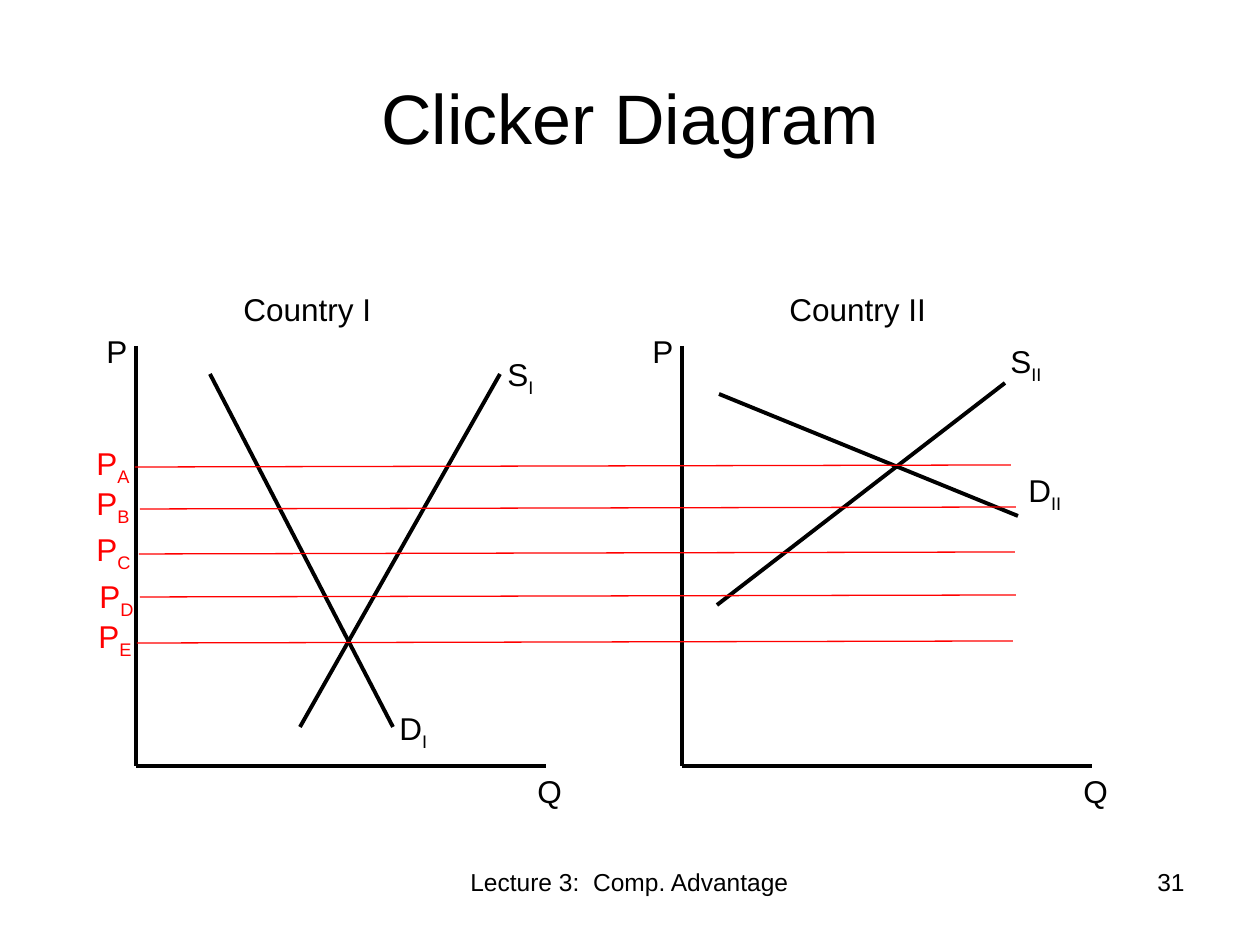
from dataclasses import dataclass

from lxml import etree
from pptx import Presentation
from pptx.dml.color import RGBColor
from pptx.enum.shapes import MSO_CONNECTOR
from pptx.enum.text import MSO_ANCHOR, PP_ALIGN
from pptx.oxml.ns import qn
from pptx.slide import Slide
from pptx.text.text import Font
from pptx.util import Emu, Pt

STRAIGHT = MSO_CONNECTOR.STRAIGHT
MIDDLE = MSO_ANCHOR.MIDDLE
LEFT, CENTER, RIGHT = PP_ALIGN.LEFT, PP_ALIGN.CENTER, PP_ALIGN.RIGHT
PIXELS_PER_INCH = 126
BLACK, RED = "000000", "FF0000"
AXIS_TOP, AXIS_BOTTOM, AXIS_LENGTH = 346, 766, 410
PRICE_LENGTH, PRICE_RISE = 876, 2


@dataclass(frozen=True)
class Label:
    text: str
    left: int
    top: int
    width: int = 63
    height: int = 50
    subscript: str = ""
    color: str = BLACK
    size: int = 18
    align: PP_ALIGN = LEFT


@dataclass(frozen=True)
class Segment:
    start: tuple[int, int]
    end: tuple[int, int]
    color: str = BLACK
    weight: float = 2.25


@dataclass(frozen=True)
class Curve:
    name: str
    segment: Segment
    label_left: int
    label_top: int


@dataclass(frozen=True)
class Country:
    numeral: str
    axis_x: int
    curves: tuple[Curve, ...]


@dataclass(frozen=True)
class Price:
    name: str
    start: tuple[int, int]
    label_left: int
    label_top: int


COUNTRIES = (
    Country("II", 682, (
        Curve("D", Segment((719, 394), (1018, 516)), 1016, 465),
        Curve("S", Segment((717, 605), (1005, 383)), 998, 336),
    )),
    Country("I", 136, (
        Curve("D", Segment((210, 374), (393, 727)), 387, 703),
        Curve("S", Segment((300, 727), (500, 374)), 495, 349),
    )),
)
PRICES = (
    Price("A", (135, 467), 84, 438),
    Price("B", (140, 509), 84, 478),
    Price("C", (139, 554), 84, 524),
    Price("D", (140, 597), 87, 571),
    Price("E", (137, 643), 86, 611),
)


def px(length: int) -> Emu:
    return Emu(round(length * 914400 / PIXELS_PER_INCH))


def rgb(color: str) -> RGBColor:
    return RGBColor.from_string(color)


def style_font(font: Font, size: int, color: str) -> None:
    font.name = "Arial"
    font.size = Pt(size)
    font.color.rgb = rgb(color)


def draw_label(slide: Slide, label: Label) -> None:
    shape = slide.shapes.add_textbox(
        px(label.left), px(label.top), px(label.width), px(label.height))
    shape.text_frame.word_wrap = True
    paragraph = shape.text_frame.paragraphs[0]
    paragraph.alignment = label.align
    style_font(paragraph.font, label.size, label.color)
    paragraph.add_run().text = label.text
    if label.subscript:
        run = paragraph.add_run()
        run.text = label.subscript
        run._r.get_or_add_rPr().set("baseline", "-25000")


def draw_segment(slide: Slide, segment: Segment) -> None:
    connector = slide.shapes.add_connector(
        STRAIGHT, *map(px, segment.start), *map(px, segment.end))
    connector.line.color.rgb = rgb(segment.color)
    connector.line.width = Pt(segment.weight)
    etree.SubElement(connector._element.spPr, qn("a:effectLst"))


def draw_country(slide: Slide, country: Country) -> None:
    x = country.axis_x
    origin = (x, AXIS_BOTTOM)
    draw_segment(slide, Segment((x, AXIS_TOP), origin))
    draw_segment(slide, Segment(origin, (x + AXIS_LENGTH, AXIS_BOTTOM)))
    draw_label(slide, Label(f"Country {country.numeral}", x + 95, 284, 210))
    draw_label(slide, Label("P", x - 42, 326))
    draw_label(slide, Label("Q", x + 389, AXIS_BOTTOM))
    for curve in country.curves:
        draw_segment(slide, curve.segment)
        draw_label(slide, Label(curve.name, curve.label_left, curve.label_top,
                                subscript=country.numeral))


def draw_price(slide: Slide, price: Price) -> None:
    x, y = price.start
    end = (x + PRICE_LENGTH, y - PRICE_RISE)
    draw_segment(slide, Segment(price.start, end, RED, 0.75))
    draw_label(slide, Label("P", price.label_left, price.label_top,
                            subscript=price.name, color=RED))


def draw_title(slide: Slide, text: str) -> None:
    title = slide.shapes.title
    title.left, title.top = px(63), px(38)
    title.width, title.height = px(1134), px(157)
    title.text_frame.text = text
    title.text_frame.vertical_anchor = MIDDLE
    paragraph = title.text_frame.paragraphs[0]
    paragraph.alignment = CENTER
    style_font(paragraph.font, 40, BLACK)


def main() -> None:
    presentation = Presentation()
    presentation.slide_width, presentation.slide_height = px(1260), px(945)
    slide = presentation.slides.add_slide(presentation.slide_layouts[5])
    draw_title(slide, "Clicker Diagram")
    draw_label(slide, Label("Lecture 3:  Comp. Advantage", 430, 861, 399, 66,
                            size=14, align=CENTER))
    draw_label(slide, Label("31", 903, 861, 294, 66, size=14, align=RIGHT))
    for country in COUNTRIES:
        draw_country(slide, country)
    for price in PRICES:
        draw_price(slide, price)
    presentation.save("out.pptx")


if __name__ == "__main__":
    main()
